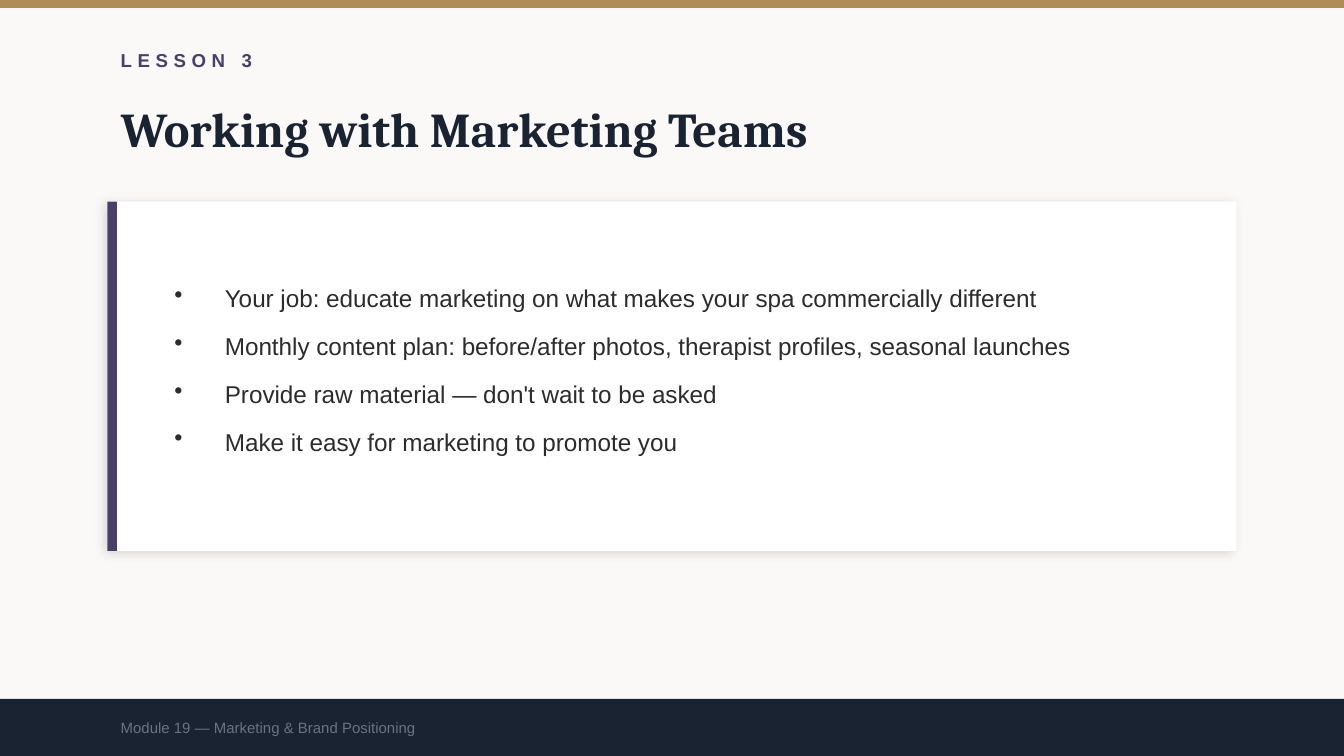
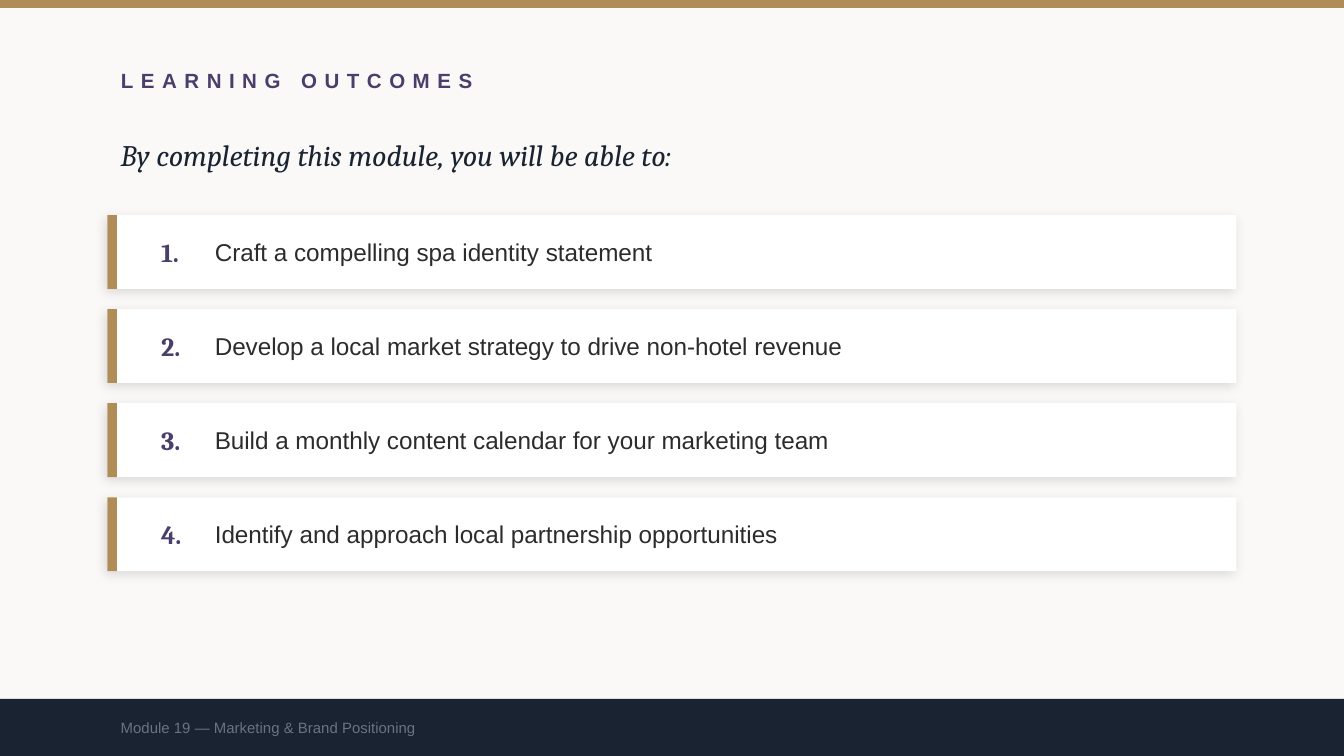
from lxml import etree
from pptx import Presentation
from pptx.dml.color import RGBColor
from pptx.enum.shapes import MSO_SHAPE
from pptx.enum.text import MSO_ANCHOR, MSO_AUTO_SIZE, PP_ALIGN
from pptx.oxml.ns import qn
from pptx.util import Emu, Pt

RECTANGLE = MSO_SHAPE.RECTANGLE
MIDDLE = MSO_ANCHOR.MIDDLE
LEFT = PP_ALIGN.LEFT
NO_AUTOFIT = MSO_AUTO_SIZE.NONE

# Content
FOOTER = "Module 19 — Marketing & Brand Positioning"
LESSON = {
    "label": "LESSON 3",
    "title": "Working with Marketing Teams",
    "bullets": [
        "Your job: educate marketing on what makes your spa commercially different",
        "Monthly content plan: before/after photos, therapist profiles, seasonal launches",
        "Provide raw material — don't wait to be asked",
        "Make it easy for marketing to promote you",
    ],
}
OUTCOMES = {
    "title": "LEARNING OUTCOMES",
    "intro": "By completing this module, you will be able to:",
    "items": [
        "Craft a compelling spa identity statement",
        "Develop a local market strategy to drive non-hotel revenue",
        "Build a monthly content calendar for your marketing team",
        "Identify and approach local partnership opportunities",
    ],
}

# Colours
CREAM = RGBColor(0xFA, 0xF9, 0xF7)
GOLD = RGBColor(0xB0, 0x8D, 0x57)
PURPLE = RGBColor(0x4A, 0x3F, 0x6B)
NAVY = RGBColor(0x1A, 0x23, 0x32)
WHITE = RGBColor(0xFF, 0xFF, 0xFF)
INK = RGBColor(0x2C, 0x2C, 0x2C)
GREY = RGBColor(0x6B, 0x72, 0x80)

# Text styles: font, size, colour and extras
LABEL = dict(font="Arial", size=10, color=PURPLE, bold=True, spacing=3)
SECTION = dict(LABEL, size=11, spacing=4)
HEADLINE = dict(font="Cambria", size=26, color=NAVY, bold=True)
INTRO = dict(font="Cambria", size=16, color=NAVY, italic=True)
NUMBER = dict(font="Cambria", size=14, color=PURPLE, bold=True)
BODY = dict(font="Arial", size=13, color=INK)
FOOTNOTE = dict(font="Arial", size=8, color=GREY)

# Measures in px, 200 to the inch
SCALE = 4572
WIDTH, HEIGHT = 2000, 1125
MARGIN = 160
CONTENT_WIDTH = WIDTH - 2 * MARGIN
TEXT_WIDTH = 1600
BAND_HEIGHT = 12
FOOTER_TOP = 1040
ACCENT_WIDTH = 14
BULLET_INDENT = 75
ROWS_TOP, ROW_HEIGHT, ROW_GAP = 320, 110, 30
NUMBER_LEFT, ITEM_LEFT, ITEM_WIDTH = 220, 300, 1480


def px(*lengths):
    return [Emu(length * SCALE) for length in lengths]


# Building blocks
def add_rectangle(slide, box, color):
    shape = slide.shapes.add_shape(RECTANGLE, *px(*box))
    shape.shadow.inherit = False
    shape.fill.solid()
    shape.fill.fore_color.rgb = color
    shape.line.fill.background()
    return shape


def add_card(slide, top, height, accent):
    card = add_rectangle(slide, (MARGIN, top, CONTENT_WIDTH, height), WHITE)
    effects = card._element.spPr.find(qn("a:effectLst"))
    shadow = etree.SubElement(effects, qn("a:outerShdw"), blurRad=str(Pt(6)),
                              dist=str(Pt(2)), dir=str(135 * 60000),
                              algn="bl", rotWithShape="0")
    shade = etree.SubElement(shadow, qn("a:srgbClr"), val="000000")
    etree.SubElement(shade, qn("a:alpha"), val="12000")
    add_rectangle(slide, (MARGIN, top, ACCENT_WIDTH, height), accent)


def add_run(paragraph, text, font, size, color, bold=False, italic=False, spacing=0):
    run = paragraph.add_run()
    run.text = text
    run.font.name = font
    run.font.size = Pt(size)
    run.font.color.rgb = color
    run.font.bold = bold
    run.font.italic = italic
    if spacing:
        run._r.get_or_add_rPr().set("spc", str(spacing * 100))


def fill_frame(shape, lines, style, bulleted=False):
    frame = shape.text_frame
    frame.word_wrap = True
    frame.auto_size = NO_AUTOFIT
    frame.vertical_anchor = MIDDLE
    for index, line in enumerate(lines):
        paragraph = frame.add_paragraph() if index else frame.paragraphs[0]
        paragraph.alignment = LEFT
        if bulleted:
            properties = paragraph._p.get_or_add_pPr()
            indent = BULLET_INDENT * SCALE
            properties.set("marL", str(indent))
            properties.set("indent", str(-indent))
            etree.SubElement(properties, qn("a:buChar"), char="•")
            paragraph.space_after = Pt(10)
        add_run(paragraph, line, **style)


def add_text(slide, box, lines, style, bulleted=False):
    fill_frame(slide.shapes.add_textbox(*px(*box)), lines, style, bulleted)


def start_slide(presentation, title, box, style):
    slide = presentation.slides.add_slide(presentation.slide_layouts[5])
    slide.background.fill.solid()
    slide.background.fill.fore_color.rgb = CREAM
    heading = slide.shapes.title
    heading.left, heading.top, heading.width, heading.height = px(*box)
    fill_frame(heading, [title], style)

    # Top band and footer
    footer_height = HEIGHT - FOOTER_TOP
    add_rectangle(slide, (0, 0, WIDTH, BAND_HEIGHT), GOLD)
    add_rectangle(slide, (0, FOOTER_TOP, WIDTH, footer_height), NAVY)
    add_text(slide, (MARGIN, FOOTER_TOP, TEXT_WIDTH, footer_height), [FOOTER], FOOTNOTE)
    return slide


# Slides
def build_lesson(presentation):
    slide = start_slide(presentation, LESSON["title"],
                        (MARGIN, 130, CONTENT_WIDTH, 120), HEADLINE)
    add_text(slide, (MARGIN, 60, TEXT_WIDTH, 60), [LESSON["label"]], LABEL)
    add_card(slide, 300, 520, PURPLE)
    add_text(slide, (240, 330, 1540, 440), LESSON["bullets"], BODY, bulleted=True)


def build_outcomes(presentation):
    slide = start_slide(presentation, OUTCOMES["title"],
                        (MARGIN, 80, TEXT_WIDTH, 80), SECTION)
    add_text(slide, (MARGIN, 180, TEXT_WIDTH, 100), [OUTCOMES["intro"]], INTRO)
    for index, item in enumerate(OUTCOMES["items"]):
        top = ROWS_TOP + index * (ROW_HEIGHT + ROW_GAP)
        add_card(slide, top, ROW_HEIGHT, GOLD)
        add_text(slide, (NUMBER_LEFT, top, ITEM_LEFT - NUMBER_LEFT, ROW_HEIGHT),
                 [f"{index + 1}."], NUMBER)
        add_text(slide, (ITEM_LEFT, top, ITEM_WIDTH, ROW_HEIGHT), [item], BODY)


def main():
    presentation = Presentation()
    presentation.slide_width, presentation.slide_height = px(WIDTH, HEIGHT)
    build_lesson(presentation)
    build_outcomes(presentation)
    presentation.save("out.pptx")


if __name__ == "__main__":
    main()
